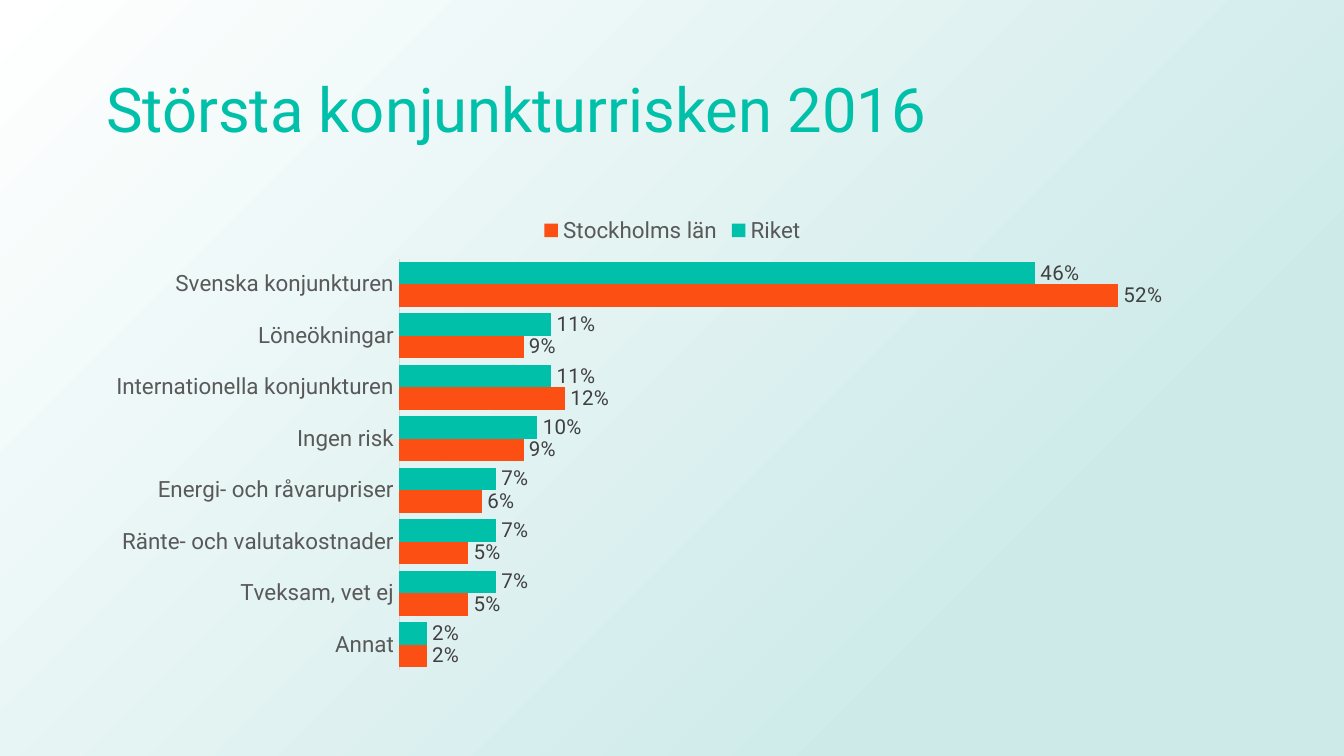
"""Build a slide with a bar chart of the largest business cycle risks in 2016."""
from dataclasses import dataclass

from pptx import Presentation
from pptx.chart.data import CategoryChartData
from pptx.dml.color import RGBColor
from pptx.enum.chart import XL_CHART_TYPE, XL_LABEL_POSITION, XL_LEGEND_POSITION, XL_TICK_MARK
from pptx.enum.shapes import MSO_SHAPE
from pptx.enum.text import MSO_ANCHOR
from pptx.oxml import parse_xml
from pptx.oxml.ns import nsdecls
from pptx.util import Pt

EMU_PER_PIXEL = 914400 / 134.4
WIDTH, HEIGHT = 1344, 756
CATEGORIES = [
    "Svenska konjunkturen",
    "Löneökningar",
    "Internationella konjunkturen",
    "Ingen risk",
    "Energi- och råvarupriser",
    "Ränte- och valutakostnader",
    "Tveksam, vet ej",
    "Annat",
]


@dataclass(frozen=True)
class Theme:
    """Colours, fonts and type sizes of the slide."""
    font: str = "Roboto"
    teal: str = "00C0A9"
    orange: str = "FB4F14"
    axis_text: str = "595959"
    label_text: str = "404040"
    axis_line: str = "D9D9D9"
    glow: str = "CDEAE9"
    paper: str = "FFFFFF"
    title_size: int = 33
    axis_size: int = 12
    label_size: int = 11


def emu(*pixels):
    """Turn pixel lengths into EMU."""
    return [round(pixel * EMU_PER_PIXEL) for pixel in pixels]


def set_values(target, values):
    """Set each named attribute on the target."""
    for name, value in values.items():
        setattr(target, name, value)


class SlideBuilder:
    """Hold the theme and the current slide, and add elements to it."""

    def __init__(self, slide, theme):
        """Keep the slide and its theme."""
        self.slide = slide
        self.theme = theme

    def style_font(self, font, size, color):
        """Give a font the theme typeface, a size and a colour."""
        set_values(font, {"name": self.theme.font, "size": Pt(size), "bold": False})
        font.color.rgb = RGBColor.from_string(color)

    def add_backdrop(self):
        """Cover the slide with a gradient glowing from the lower right corner."""
        box = self.slide.shapes.add_shape(MSO_SHAPE.RECTANGLE, *emu(0, 0, WIDTH, HEIGHT))
        stops = "".join(
            f'<a:gs pos="{position * 1000}"><a:srgbClr val="{color}"/></a:gs>'
            for position, color in ((23, self.theme.glow), (100, self.theme.paper))
        )
        gradient = parse_xml(
            f'<a:gradFill {nsdecls("a")} rotWithShape="1"><a:gsLst>{stops}</a:gsLst>'
            '<a:path path="circle"><a:fillToRect l="100000" t="100000"/></a:path></a:gradFill>'
        )
        box._element.spPr.insert(2, gradient)
        box.line.fill.background()
        box.shadow.inherit = False

    def add_title(self, text, left, top, width, height):
        """Add the slide title."""
        box = self.slide.shapes.add_textbox(*emu(left, top, width, height))
        set_values(box.text_frame, {"word_wrap": True, "vertical_anchor": MSO_ANCHOR.MIDDLE})
        para = box.text_frame.paragraphs[0]
        para.line_spacing = 0.9
        span = para.add_run()
        span.text = text
        self.style_font(span.font, self.theme.title_size, self.theme.teal)

    def add_bar_chart(self, categories, series, left, top, width, height):
        """Add a clustered bar chart from (name, values, colour) series."""
        theme = self.theme
        data = CategoryChartData(number_format="0%")
        data.categories = categories
        for name, values, _ in series:
            data.add_series(name, values)
        frame = self.slide.shapes.add_chart(
            XL_CHART_TYPE.BAR_CLUSTERED, *emu(left, top, width, height), data
        )
        chart = frame.chart
        set_values(chart, {"has_title": False, "has_legend": True})
        self.style_font(chart.font, theme.axis_size, theme.axis_text)
        set_values(chart.legend, {"position": XL_LEGEND_POSITION.TOP, "include_in_layout": False})
        self.style_font(chart.legend.font, theme.axis_size, theme.axis_text)

        set_values(chart.value_axis, {
            "visible": False,
            "has_major_gridlines": False,
            "minimum_scale": 0,
            "maximum_scale": 0.6,
        })
        axis = chart.category_axis
        set_values(axis, {
            "reverse_order": True,
            "major_tick_mark": XL_TICK_MARK.NONE,
            "minor_tick_mark": XL_TICK_MARK.NONE,
        })
        self.style_font(axis.tick_labels.font, theme.axis_size, theme.axis_text)
        axis.format.line.width = Pt(0.75)
        axis.format.line.color.rgb = RGBColor.from_string(theme.axis_line)

        plot = chart.plots[0]
        set_values(plot, {"gap_width": 30, "overlap": 0, "vary_by_categories": False})
        for bars, (_, _, color) in zip(plot.series, series):
            bars.format.fill.solid()
            bars.format.fill.fore_color.rgb = RGBColor.from_string(color)
            set_values(bars.data_labels, {
                "show_value": True,
                "number_format": "0%",
                "number_format_is_linked": False,
                "position": XL_LABEL_POSITION.OUTSIDE_END,
            })
            self.style_font(bars.data_labels.font, theme.label_size, theme.label_text)


def main():
    """Build and save the deck."""
    deck = Presentation()
    deck.slide_width, deck.slide_height = emu(WIDTH, HEIGHT)
    theme = Theme()
    builder = SlideBuilder(deck.slides.add_slide(deck.slide_layouts[6]), theme)
    series = [
        ("Riket", [0.46, 0.11, 0.11, 0.10, 0.07, 0.07, 0.07, 0.02], theme.teal),
        ("Stockholms län", [0.52, 0.09, 0.12, 0.09, 0.06, 0.05, 0.05, 0.02], theme.orange),
    ]
    builder.add_backdrop()
    builder.add_title("Största konjunkturrisken 2016", 93, 40, 1159, 146)
    builder.add_bar_chart(CATEGORIES, series, 93, 202, 1159, 478)
    deck.save("out.pptx")


if __name__ == "__main__":
    main()
